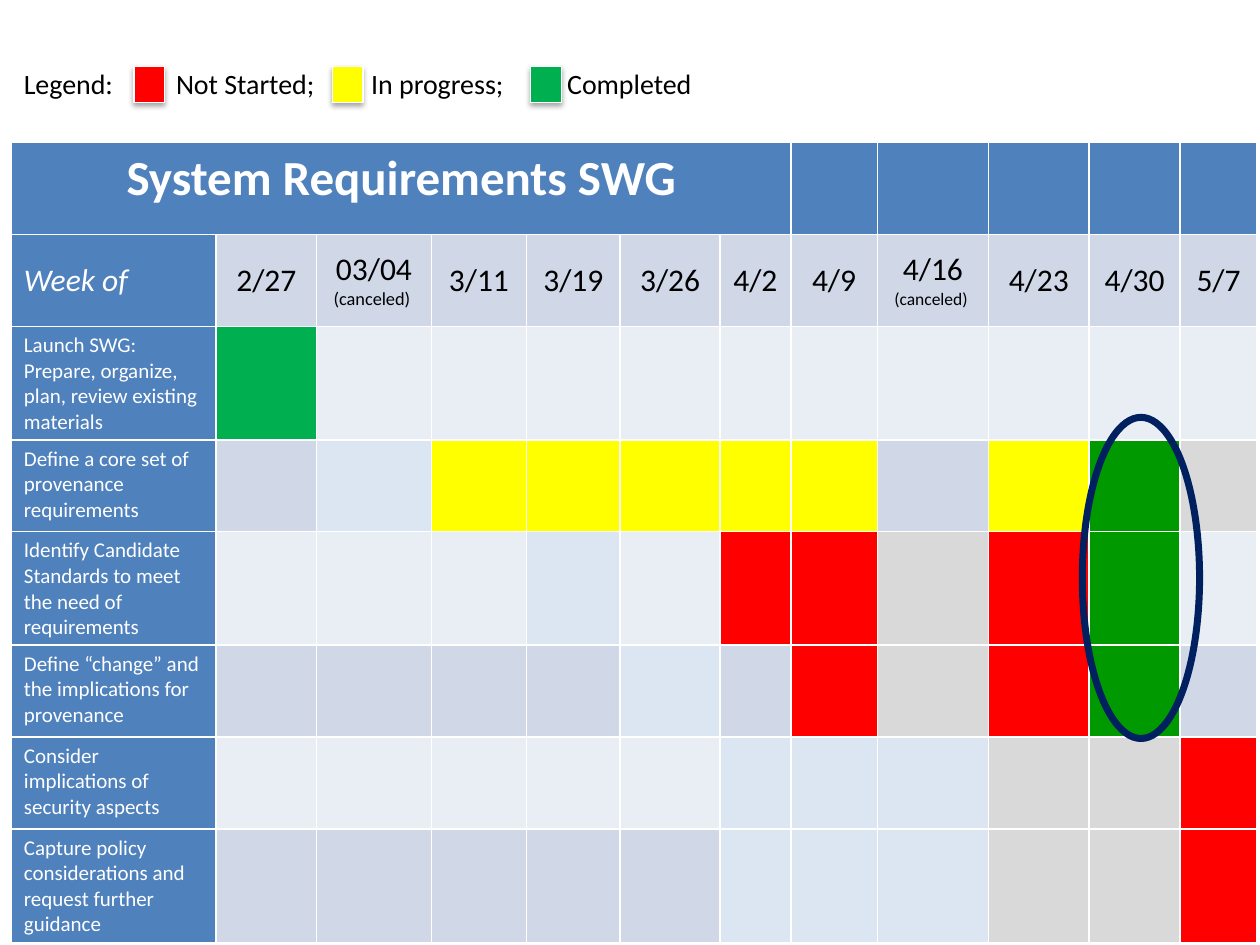
from dataclasses import dataclass

from lxml import etree
from pptx import Presentation
from pptx.dml.color import RGBColor
from pptx.enum.shapes import MSO_SHAPE
from pptx.enum.text import MSO_ANCHOR, MSO_AUTO_SIZE, PP_ALIGN
from pptx.oxml.ns import qn
from pptx.util import Pt

RECTANGLE, OVAL = MSO_SHAPE.RECTANGLE, MSO_SHAPE.OVAL
LEFT, CENTER = PP_ALIGN.LEFT, PP_ALIGN.CENTER
MIDDLE = MSO_ANCHOR.MIDDLE


@dataclass(frozen=True)
class Theme:
    font: str = "Calibri"
    black: str = "000000"
    white: str = "FFFFFF"
    header: str = "4F81BD"
    band_dark: str = "D0D8E8"
    band_light: str = "E9EDF4"
    pale: str = "DCE6F2"
    gray: str = "D9D9D9"
    not_started: str = "FF0000"
    in_progress: str = "FFFF00"
    completed: str = "00B050"
    completed_dark: str = "009900"
    ring: str = "002060"
    title_size: float = 28
    week_size: float = 18
    legend_size: float = 16
    task_size: float = 12


theme = Theme()


def add_text(paragraph, text, size, color=theme.black, bold=False, italic=False, align=LEFT):
    paragraph.alignment = align
    run = paragraph.add_run()
    run.text = text
    font = run.font
    font.name, font.size, font.bold, font.italic = theme.font, Pt(size), bold, italic
    font.color.rgb = RGBColor.from_string(color)


def paint(target, color):
    target.fill.solid()
    target.fill.fore_color.rgb = RGBColor.from_string(color)


prs = Presentation()
prs.slide_width, prs.slide_height = Pt(720), Pt(540)
slide = prs.slides.add_slide(prs.slide_layouts[6])
shapes = slide.shapes

# Legend: labels stand on tab stops, leaving room for the swatches
legend = shapes.add_textbox(Pt(6.5), Pt(34.5), Pt(508), Pt(26.6))
paint(legend, theme.white)
legend.text_frame.word_wrap = True
legend.text_frame.auto_size = MSO_AUTO_SIZE.SHAPE_TO_FIT_TEXT
legend_line = legend.text_frame.paragraphs[0]
tab_list = etree.SubElement(legend_line._p.get_or_add_pPr(), qn("a:tabLst"))
for stop in (87, 198.5, 310.5):
    etree.SubElement(tab_list, qn("a:tab"), pos=str(Pt(stop)), algn="l")
add_text(legend_line, "Legend:\tNot Started;\tIn progress;\tCompleted", theme.legend_size)

for i, status_color in enumerate((theme.not_started, theme.in_progress, theme.completed)):
    swatch = shapes.add_shape(RECTANGLE, Pt(76.5 + 113.4 * i), Pt(38), Pt(17.5), Pt(20.5))
    paint(swatch, status_color)
    swatch.line.color.rgb = RGBColor.from_string(theme.white)
    swatch.line.width = Pt(0.75)
    swatch.shadow.inherit = False
    effects = swatch._element.spPr.find(qn("a:effectLst"))
    shadow = etree.SubElement(effects, qn("a:outerShdw"), blurRad=str(Pt(3.1)),
                              dist=str(Pt(1.8)), dir="5400000", rotWithShape="0")
    shadow_color = etree.SubElement(shadow, qn("a:srgbClr"), val=theme.black)
    etree.SubElement(shadow_color, qn("a:alpha"), val="35000")

# Each week is a list of paragraphs, each paragraph a list of (text, size)
big = theme.week_size
weeks = [
    [[("2/27", big)]],
    [[("03/04 ", big), ("(canceled) ", 10.5)]],
    [[("3/11", big)]],
    [[("3/19", big)]],
    [[("3/26", big)]],
    [[("4/2", big)]],
    [[("4/9", big)]],
    [[("4/16", big)], [("(canceled) ", 10)]],
    [[("4/23", big)]],
    [[("4/30", big)]],
    [[("5/7", big)]],
]
# One letter per week; a dot keeps the colour of the row's band
status_colors = {"C": theme.completed, "D": theme.completed_dark, "Y": theme.in_progress,
                 "R": theme.not_started, "G": theme.gray, "P": theme.pale}
tasks = [
    ("Launch SWG: Prepare, organize, plan, review existing materials", "C.........."),
    ("Define a core set of provenance requirements", ".PYYYYY.YDG"),
    ("Identify Candidate Standards to meet the need of requirements", "...P.RRGRD."),
    ("Define “change” and the implications for provenance", "....P.RGRD."),
    ("Consider implications of security aspects", ".....PPPGGR"),
    ("Capture policy considerations and request further guidance", ".....PPPGGR"),
]
column_widths = (117, 57.5, 65.5, 54.5, 53.5, 57, 40.5, 49.5, 63.5, 57.5, 52, 44)
row_height = 52.5
row_count = len(tasks) + 2

schedule = shapes.add_table(row_count, len(column_widths), Pt(6.5), Pt(81.5),
                            Pt(sum(column_widths)), Pt(row_height * row_count)).table
for column, width in zip(schedule.columns, column_widths):
    column.width = Pt(width)
for row in schedule.rows:
    row.height = Pt(row_height)

for cell in schedule.rows[0].cells:
    paint(cell, theme.header)
heading = schedule.cell(0, 0)
heading.merge(schedule.cell(0, 6))
add_text(heading.text_frame.paragraphs[0], "System Requirements SWG", theme.title_size,
         color=theme.white, bold=True, align=CENTER)

week_label = schedule.cell(1, 0)
paint(week_label, theme.header)
week_label.vertical_anchor = MIDDLE
add_text(week_label.text_frame.paragraphs[0], "Week of", theme.week_size,
         color=theme.white, italic=True)
for col, week in enumerate(weeks, start=1):
    cell = schedule.cell(1, col)
    paint(cell, theme.band_dark)
    cell.vertical_anchor = MIDDLE
    for i, parts in enumerate(week):
        frame = cell.text_frame
        paragraph = frame.add_paragraph() if i else frame.paragraphs[0]
        for text, size in parts:
            add_text(paragraph, text, size, align=CENTER)

for row_index, (task, statuses) in enumerate(tasks, start=2):
    task_cell = schedule.cell(row_index, 0)
    paint(task_cell, theme.header)
    add_text(task_cell.text_frame.paragraphs[0], task, theme.task_size, color=theme.white)
    band = theme.band_dark if row_index % 2 else theme.band_light
    for col, status in enumerate(statuses, start=1):
        paint(schedule.cell(row_index, col), status_colors.get(status, band))

# Ring around the tasks completed in the week of 4/30
ring = shapes.add_shape(OVAL, Pt(618.5), Pt(238.5), Pt(67), Pt(183.5))
ring.fill.background()
ring.line.color.rgb = RGBColor.from_string(theme.ring)
ring.line.width = Pt(4)
ring.shadow.inherit = False

prs.save("out.pptx")
